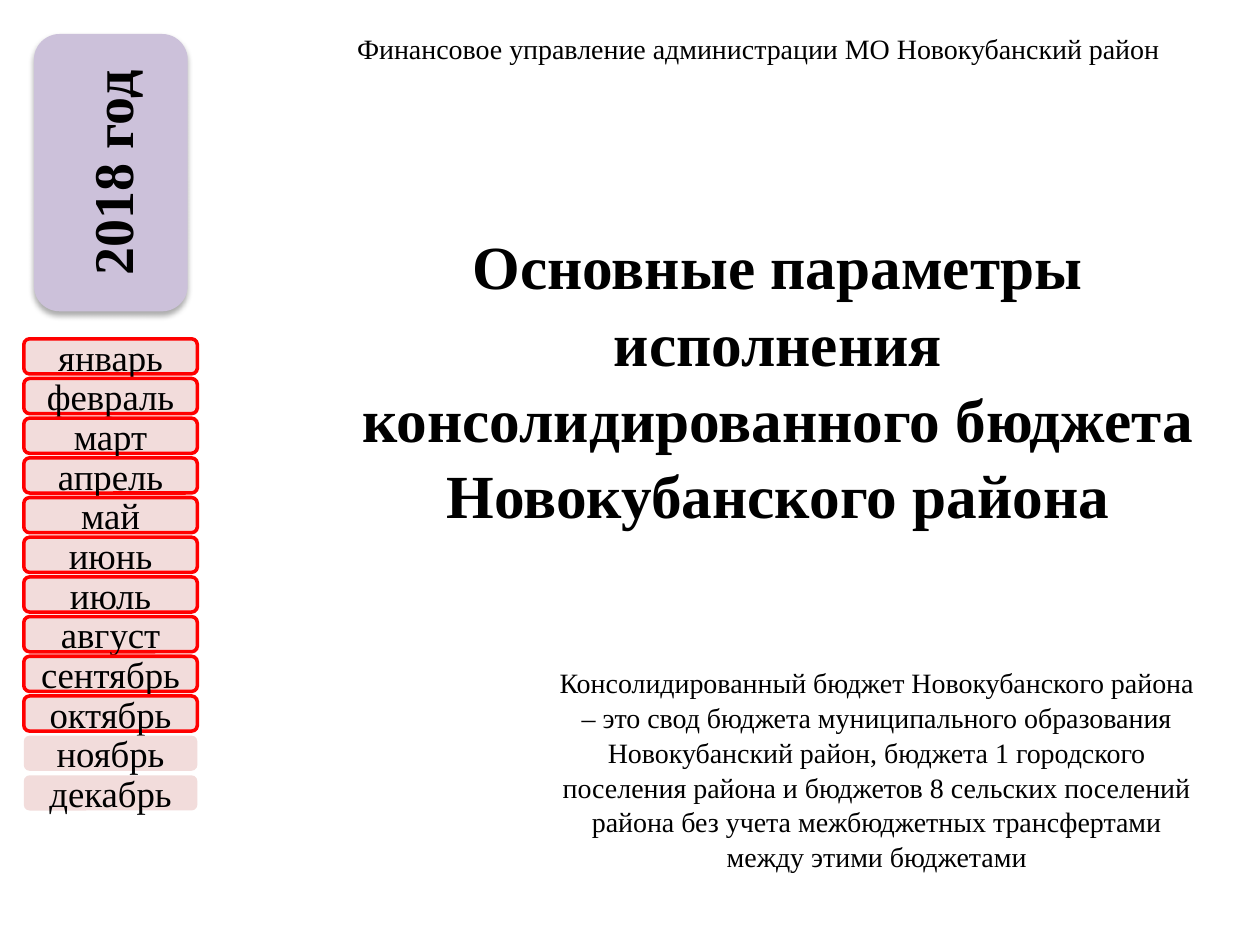
from lxml import etree
from pptx import Presentation
from pptx.dml.color import RGBColor
from pptx.enum.shapes import MSO_SHAPE
from pptx.enum.text import MSO_ANCHOR, MSO_AUTO_SIZE, PP_ALIGN
from pptx.oxml.ns import qn
from pptx.util import Cm, Pt

ROUND = MSO_SHAPE.ROUNDED_RECTANGLE
MIDDLE = MSO_ANCHOR.MIDDLE
CENTER = PP_ALIGN.CENTER
FONT = "Times New Roman"
COLORS = {"text": "000000", "month": "F2DCDB", "past": "FF0000",
          "year": "CCC1DA", "shade": "000000"}

MONTHS = ["январь", "февраль", "март", "апрель", "май", "июнь", "июль",
          "август", "сентябрь", "октябрь", "ноябрь", "декабрь"]
PAST = 10
TITLE = "Финансовое управление администрации МО Новокубанский район"
HEAD = ("Основные параметры исполнения консолидированного бюджета "
        "Новокубанского района")
NOTE = ("Консолидированный бюджет Новокубанского района – это свод бюджета "
        "муниципального образования Новокубанский район, бюджета 1 городского "
        "поселения района и бюджетов 8 сельских поселений района без учета "
        "межбюджетных трансфертами между этими бюджетами")


def color(name):
    return RGBColor.from_string(COLORS[name])


def write(shape, text, size, bold=False):
    frame = shape.text_frame
    frame.word_wrap = True
    frame.text = text
    para = frame.paragraphs[0]
    para.alignment = CENTER
    font = para.runs[0].font
    font.name, font.size, font.bold = FONT, Pt(size), bold
    font.color.rgb = color("text")
    return para


def add_title(slide):
    title = slide.shapes.title
    title.left, title.top = Cm(6.5), Cm(0.62)
    title.width, title.height = Cm(17.58), Cm(0.69)
    write(title, TITLE, 16)
    title.text_frame.auto_size = MSO_AUTO_SIZE.NONE
    title.text_frame.vertical_anchor = MIDDLE


def add_text(slide, box, text, size, bold=False):
    shape = slide.shapes.add_textbox(*map(Cm, box))
    write(shape, text, size, bold).line_spacing = 1.04


def add_plate(slide, box, fill, text, size, bold=False):
    """Add a rounded plate with centred text and no outline."""
    plate = slide.shapes.add_shape(ROUND, *map(Cm, box))
    plate.shadow.inherit = False
    plate.fill.solid()
    plate.fill.fore_color.rgb = color(fill)
    plate.line.fill.background()
    write(plate, text, size, bold)
    plate.text_frame.vertical_anchor = MIDDLE
    return plate


def add_shade(shape):
    """Drop a soft shadow straight below the shape."""
    effects = shape.element.spPr.find(qn("a:effectLst"))
    shade = etree.SubElement(
        effects, qn("a:outerShdw"), blurRad=str(Pt(3.5)), dist=str(Pt(2.2)),
        dir="5400000", rotWithShape="0")
    tint = etree.SubElement(shade, qn("a:srgbClr"), val=COLORS["shade"])
    etree.SubElement(tint, qn("a:alpha"), val="32000")


def add_year(slide):
    year = add_plate(slide, (-0.56, 1.93, 5.59, 3.1), "year",
                     "2018 год", 32, True)
    year.rotation = 270
    add_shade(year)


def add_months(slide):
    for i, month in enumerate(MONTHS):
        box = (0.48, 6.83 + 0.8 * i, 3.5, 0.71)
        plate = add_plate(slide, box, "month", month, 21)
        if i < PAST:
            plate.line.color.rgb = color("past")
            plate.line.width = Pt(2)


def main():
    deck = Presentation()
    deck.slide_width, deck.slide_height = Cm(25.4), Cm(19.05)
    slide = deck.slides.add_slide(deck.slide_layouts[5])
    add_title(slide)
    add_year(slide)
    add_text(slide, (10.87, 13.26, 13.61, 4.37), NOTE, 16)
    add_text(slide, (6.86, 4.42, 17.65, 6.25), HEAD, 35, True)
    add_months(slide)
    deck.save("out.pptx")


if __name__ == "__main__":
    main()
